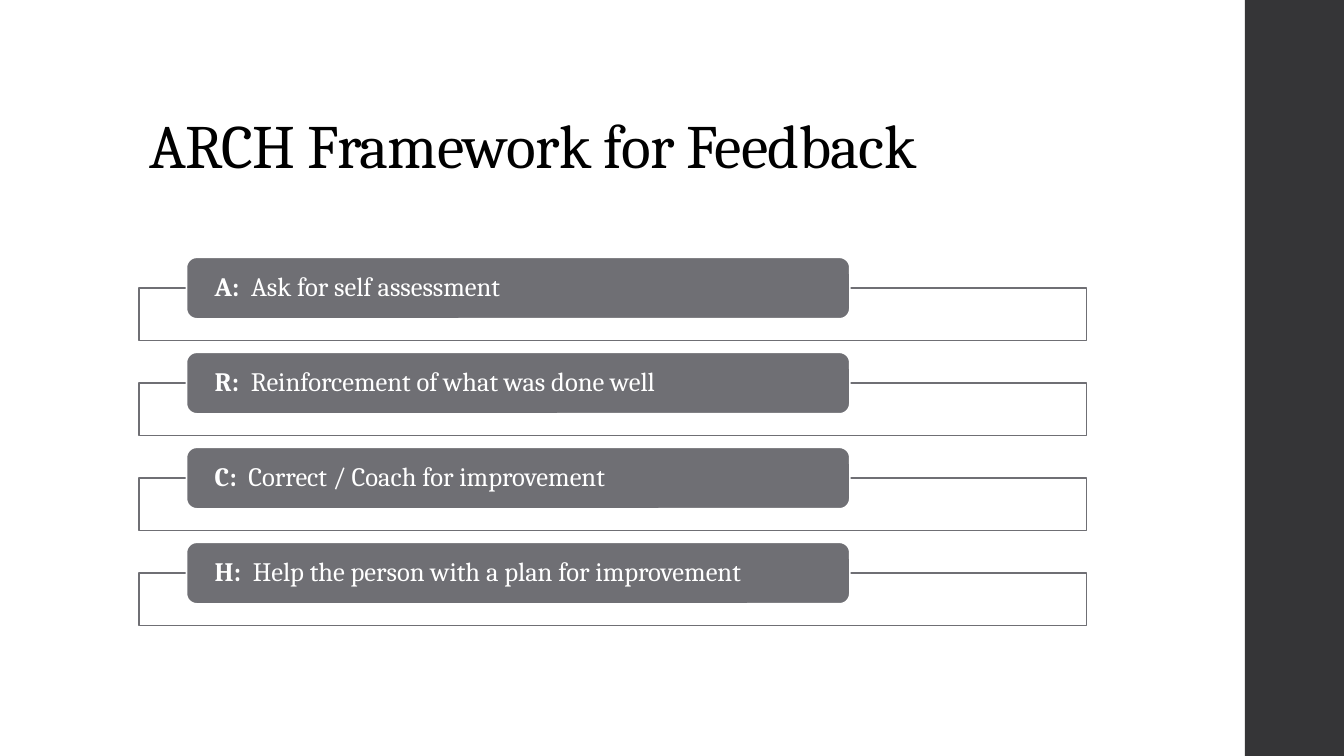
from dataclasses import dataclass

from lxml.etree import SubElement
from pptx import Presentation
from pptx.dml.color import RGBColor as RGB
from pptx.enum.shapes import MSO_SHAPE as SHAPE
from pptx.enum.text import MSO_ANCHOR as ANCHOR, PP_ALIGN as ALIGN
from pptx.oxml.ns import qn
from pptx.util import Pt


@dataclass(frozen=True)
class Theme:
    """Colours, font and type sizes of the slide."""
    white: RGB = RGB(0xFF, 0xFF, 0xFF)
    black: RGB = RGB(0, 0, 0)
    dark: RGB = RGB(0x35, 0x35, 0x37)
    gray: RGB = RGB(0x6F, 0x6F, 0x74)
    font: str = "Cambria"
    head: float = 44
    body: float = 19
    rule: float = 1.1


THEME = Theme()
STEPS = [
    ("A:", "Ask for self assessment"),
    ("R:", "Reinforcement of what was done well"),
    ("C:", "Correct / Coach for improvement"),
    ("H:", "Help the person with a plan for improvement"),
]
LEFT, TOP, PITCH = 99.4, 183.8, 67.86


def track(run, gap):
    """Set the letter spacing of a run in points."""
    run._r.get_or_add_rPr().set("spc", str(round(gap * 100)))


def style(para, size, color):
    """Give a paragraph its font, colour and line spacing."""
    para.font.name = THEME.font
    para.font.size = Pt(size)
    para.font.color.rgb = color
    para.line_spacing = 0.9
    para.alignment = ALIGN.LEFT


def add_box(slide, kind, box, fill, line=None):
    """Add a flat shape at a left, top, width, height box."""
    shape = slide.shapes.add_shape(kind, *map(Pt, box))
    shape.shadow.inherit = False
    shape.fill.solid()
    shape.fill.fore_color.rgb = fill
    if line is None:
        shape.line.fill.background()
    else:
        shape.line.color.rgb = line
        shape.line.width = Pt(THEME.rule)
    return shape


def add_title(slide, text):
    """Move and format the title placeholder."""
    title = slide.shapes.title
    title.left, title.top = Pt(LEFT), Pt(28.8)
    title.width, title.height = Pt(763.2), Pt(104.4)
    frame = title.text_frame
    frame.vertical_anchor = ANCHOR.BOTTOM
    para = frame.paragraphs[0]
    style(para, THEME.head, THEME.black)
    run = para.add_run()
    run.text = text
    track(run, -0.5)


def add_panel(slide, top):
    """Add the outlined, slightly clear panel behind a step."""
    box = (LEFT, top, 676.8, 37.6)
    panel = add_box(slide, SHAPE.RECTANGLE, box, THEME.white, THEME.gray)
    color = panel._element.spPr.find(qn("a:solidFill"))[0]
    SubElement(color, qn("a:alpha")).set("val", "90000")


def add_tab(slide, top, key, text):
    """Add the rounded tab with its bold letter and wording."""
    box = (133.2, top, 473.8, 43.9)
    tab = add_box(slide, SHAPE.ROUNDED_RECTANGLE, box, THEME.gray, THEME.white)
    frame = tab.text_frame
    frame.word_wrap = True
    frame.vertical_anchor = ANCHOR.MIDDLE
    frame.margin_left = frame.margin_right = Pt(18)
    frame.margin_top = frame.margin_bottom = Pt(0)
    para = frame.paragraphs[0]
    style(para, THEME.body, THEME.white)
    label, space, words = (para.add_run() for _ in range(3))
    label.text, space.text, words.text = key, " ", text
    label.font.bold = True
    track(space, 4.2)


def main():
    """Build the slide and save it."""
    deck = Presentation()
    deck.slide_width, deck.slide_height = Pt(960), Pt(540)
    slide = deck.slides.add_slide(deck.slide_layouts[5])
    add_box(slide, SHAPE.RECTANGLE, (889.2, 0, 70.8, 540), THEME.dark)
    add_title(slide, "ARCH Framework for Feedback")
    for row, (key, text) in enumerate(STEPS):
        top = TOP + row * PITCH
        add_panel(slide, top + 21.9)
        add_tab(slide, top, key, text)
    deck.save("out.pptx")


if __name__ == "__main__":
    main()
